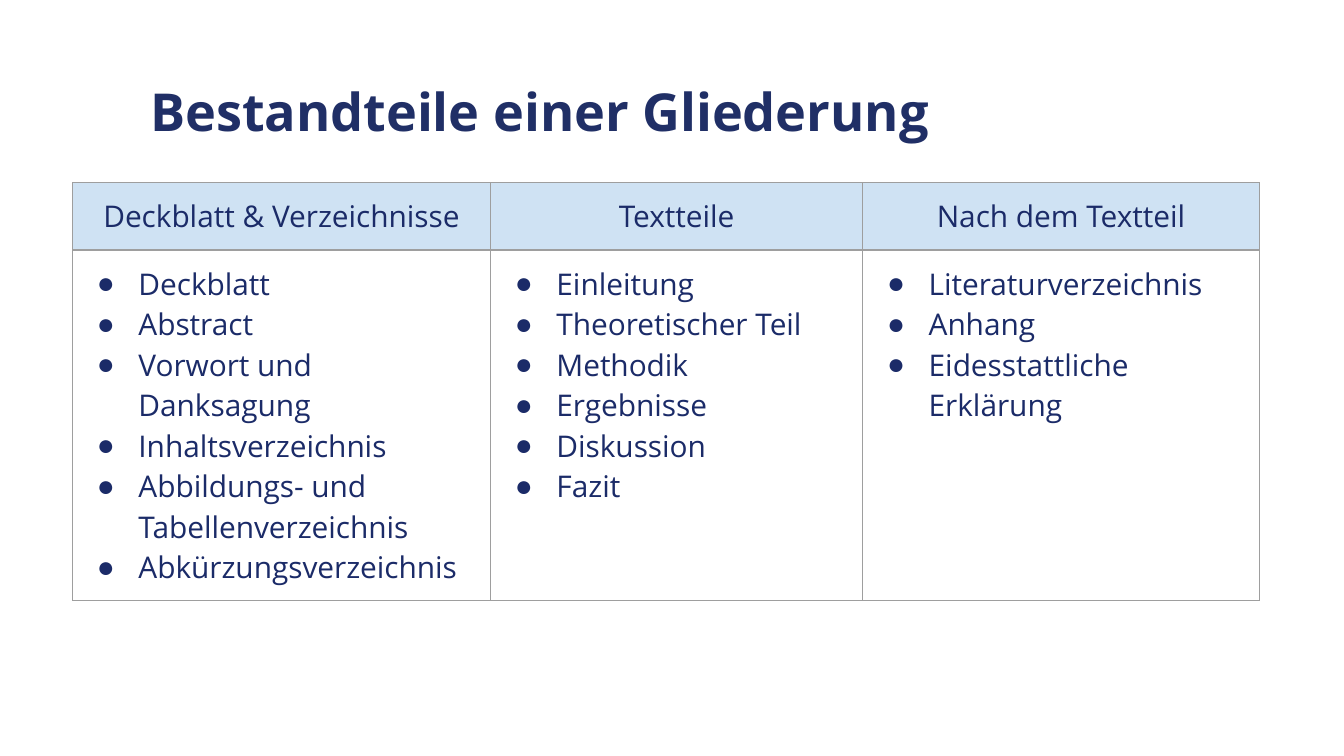
"""Build the slide on the parts of an outline: a title above a three-column table."""
from lxml import etree
from pptx import Presentation, util as u
from pptx.dml.color import RGBColor
from pptx.enum import text
from pptx.oxml import ns

FONT, BULLET_FONT = "Open Sans", "Arial"
INK = "1B2B68"
HEAD_FILL, BODY_FILL = "CFE2F3", "FFFFFF"
WIDTHS = [3.11, 2.77, 2.95]
HEIGHTS = [0.5, 2.61]
COLUMNS = {
    "Deckblatt & Verzeichnisse": [
        "Deckblatt", "Abstract", "Vorwort und Danksagung", "Inhaltsverzeichnis",
        "Abbildungs- und Tabellenverzeichnis", "Abkürzungsverzeichnis"],
    "Textteile": [
        "Einleitung", "Theoretischer Teil", "Methodik", "Ergebnisse", "Diskussion", "Fazit"],
    "Nach dem Textteil": ["Literaturverzeichnis", "Anhang", "Eidesstattliche Erklärung"],
}


def add_span(para, words, size, color, bold=False):
    span = para.add_run()
    span.text = words
    span.font.name, span.font.size, span.font.bold = FONT, u.Pt(size), bold
    span.font.color.rgb = RGBColor.from_string(color)


def add_node(parent, tag, **attributes):
    return etree.SubElement(parent, ns.qn(tag), attributes)


deck = Presentation()
deck.slide_width = u.Inches(10)
deck.slide_height = deck.slide_width * 9 // 16
page = deck.slides.add_slide(deck.slide_layouts[6])

box = page.shapes.add_textbox(u.Inches(1.02), u.Inches(0.49), u.Inches(7.87), u.Inches(0.63))
frame = box.text_frame
frame.word_wrap = True
frame.margin_left = frame.margin_right = frame.margin_top = frame.margin_bottom = u.Inches(0.1)
add_span(frame.paragraphs[0], "Bestandteile einer Gliederung", 28, "202F66", True)

table = page.shapes.add_table(
    len(HEIGHTS), len(WIDTHS), u.Inches(0.54), u.Inches(1.36),
    u.Inches(sum(WIDTHS)), u.Inches(sum(HEIGHTS))).table
for column, width in zip(table.columns, WIDTHS):
    column.width = u.Inches(width)
for row, height in zip(table.rows, HEIGHTS):
    row.height = u.Inches(height)

for cell in table.iter_cells():
    cell.margin_left = cell.margin_right = cell.margin_top = cell.margin_bottom = u.Inches(0.1)
    for side in "LRTB":
        border = add_node(cell._tc.get_or_add_tcPr(), f"a:ln{side}", w=str(u.Pt(0.75)))
        add_node(add_node(border, "a:solidFill"), "a:srgbClr", val="9E9E9E")

for index, (heading, items) in enumerate(COLUMNS.items()):
    head, body = table.cell(0, index), table.cell(1, index)
    for cell, fill in ((head, HEAD_FILL), (body, BODY_FILL)):
        cell.fill.solid()
        cell.fill.fore_color.rgb = RGBColor.from_string(fill)
    para = head.text_frame.paragraphs[0]
    para.alignment = text.PP_ALIGN.CENTER
    add_span(para, heading, 16, INK)
    for number, item in enumerate(items):
        para = body.text_frame.add_paragraph() if number else body.text_frame.paragraphs[0]
        layout = para._p.get_or_add_pPr()
        layout.set("marL", str(u.Inches(0.39)))
        layout.set("indent", str(u.Inches(-0.31)))
        add_node(add_node(layout, "a:buClr"), "a:srgbClr", val=INK)
        add_node(layout, "a:buFont", typeface=BULLET_FONT)
        add_node(layout, "a:buChar", char="●")
        add_span(para, item, 16, INK)

deck.save("out.pptx")
